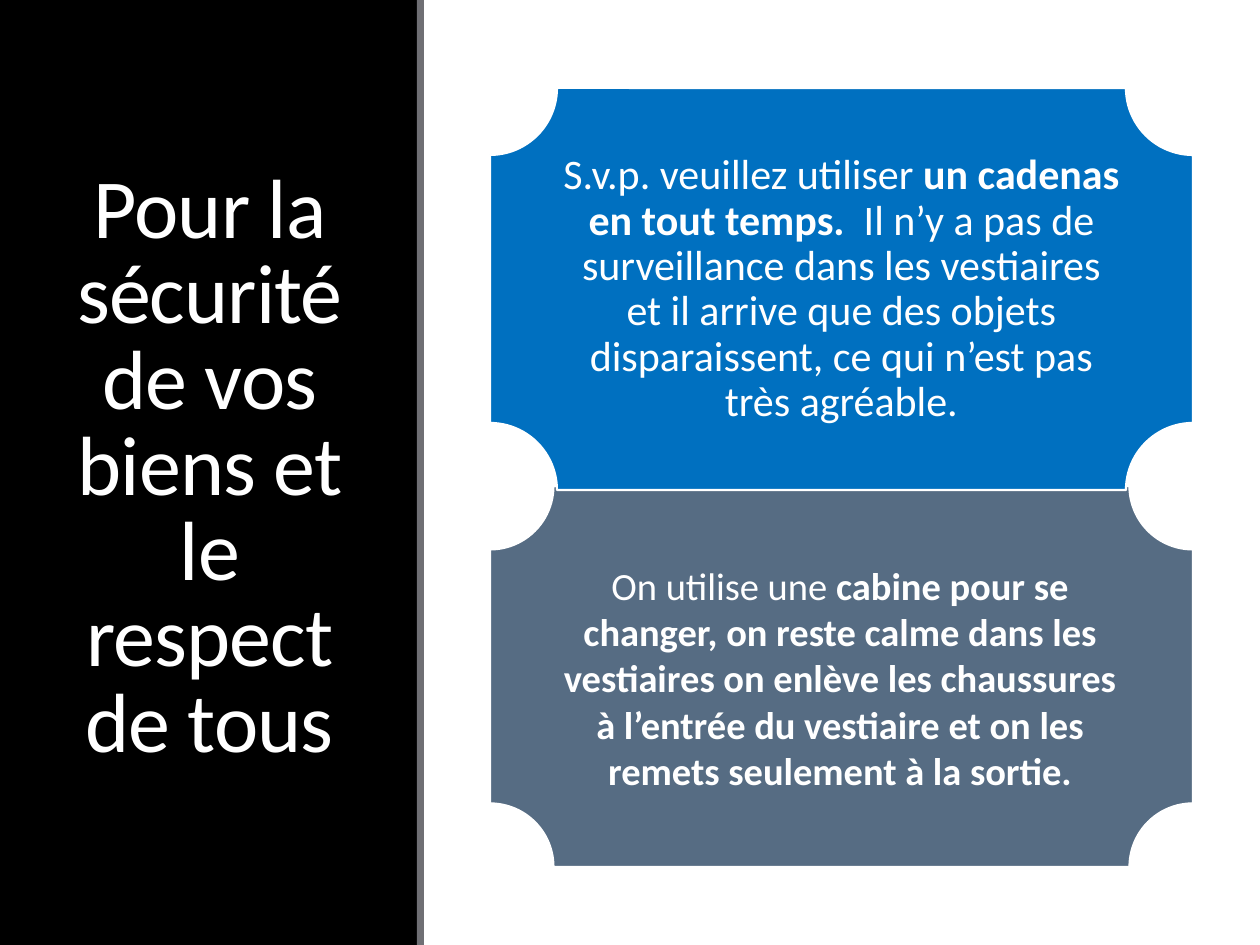
from dataclasses import dataclass

from pptx import Presentation
from pptx.dml.color import RGBColor
from pptx.enum.shapes import MSO_SHAPE as SHAPE
from pptx.enum.text import MSO_ANCHOR as ANCHOR, PP_ALIGN as ALIGN
from pptx.util import Emu, Pt

EMU_PER_PX = 914400 / 126
W, H = 1260, 945
FONT = "Calibri"
COLORS = {
    "black": "000000",
    "white": "FFFFFF",
    "grey": "6F6F74",
    "slate": "566C83",
    "blue": "0070C0",
}


@dataclass(frozen=True)
class Box:
    x: int
    y: int
    w: int
    h: int

    def emu(self) -> list[Emu]:
        return [px(v) for v in (self.x, self.y, self.w, self.h)]


@dataclass(frozen=True)
class Run:
    text: str
    bold: bool = False


@dataclass(frozen=True)
class Text:
    box: Box
    runs: tuple[Run, ...]
    size: int
    inset_x: int
    inset_y: int
    spacing: float = 1.0
    tracking: int = 0


@dataclass(frozen=True)
class Plaque:
    box: Box
    color: str
    text: Text


def px(n: int) -> Emu:
    return Emu(round(n * EMU_PER_PX))


def rgb(name: str) -> RGBColor:
    return RGBColor.from_string(COLORS[name])


def add_shape(s, kind: SHAPE, box: Box, color: str, outlined: bool = False) -> None:
    sp = s.shapes.add_shape(kind, *box.emu())
    sp.shadow.inherit = False
    sp.fill.solid()
    sp.fill.fore_color.rgb = rgb(color)
    if outlined:
        sp.line.color.rgb = rgb("white")
        sp.line.width = Pt(1.25)
    else:
        sp.line.fill.background()


def add_text(s, text: Text) -> None:
    tf = s.shapes.add_textbox(*text.box.emu()).text_frame
    tf.word_wrap = True
    tf.vertical_anchor = ANCHOR.MIDDLE
    tf.margin_left = tf.margin_right = px(text.inset_x)
    tf.margin_top = tf.margin_bottom = px(text.inset_y)
    p = tf.paragraphs[0]
    p.alignment = ALIGN.CENTER
    p.line_spacing = text.spacing
    p.font.name = FONT
    p.font.size = Pt(text.size)
    p.font.color.rgb = rgb("white")
    for run in text.runs:
        r = p.add_run()
        r.text = run.text
        if run.bold:
            r.font.bold = True
        if text.tracking:
            r.font._element.set("spc", str(text.tracking))


TITLE = Text(
    Box(50, 72, 319, 795),
    (Run("Pour la sécurité de vos biens et le respect de tous"),),
    size=48, inset_x=13, inset_y=6, spacing=0.85, tracking=-50,
)

PLAQUES = (
    Plaque(Box(490, 486, 703, 381), "slate", Text(
        Box(534, 532, 612, 291),
        (
            Run("On utilise une "),
            Run("cabine pour se changer, on reste calme dans les vestiaires "
                "on enlève les chaussures à l’entrée du vestiaire et on les "
                "remets seulement à la sortie.", True),
        ),
        size=22, inset_x=21, inset_y=21,
    )),
    Plaque(Box(490, 88, 703, 402), "blue", Text(
        Box(538, 136, 607, 307),
        (
            Run("S.v.p. veuillez utiliser "),
            Run("un cadenas en tout temps.  ", True),
            Run("Il n’y a pas de surveillance dans les vestiaires et il arrive "
                "que des objets disparaissent, ce qui n’est pas très agréable."),
        ),
        size=24, inset_x=24, inset_y=24, spacing=0.9,
    )),
)


def main() -> None:
    prs = Presentation()
    prs.slide_width, prs.slide_height = px(W), px(H)
    s = prs.slides.add_slide(prs.slide_layouts[6])
    add_shape(s, SHAPE.RECTANGLE, Box(0, 0, 418, H), "black")
    add_text(s, TITLE)
    add_shape(s, SHAPE.RECTANGLE, Box(417, 0, 7, H), "grey")
    for plaque in PLAQUES:
        add_shape(s, SHAPE.PLAQUE, plaque.box, plaque.color, outlined=True)
        add_text(s, plaque.text)
    prs.save("out.pptx")


if __name__ == "__main__":
    main()
